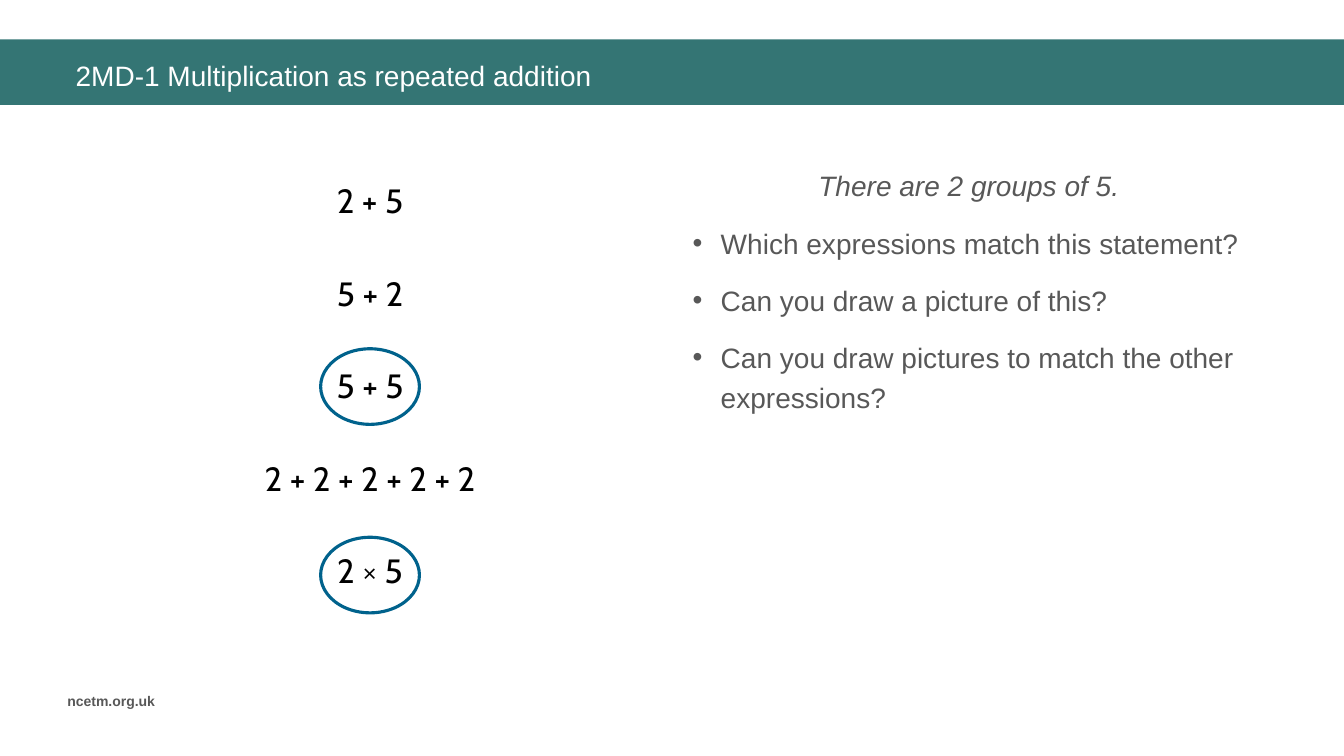
from pptx import Presentation
from pptx.dml.color import RGBColor
from pptx.enum.shapes import MSO_SHAPE
from pptx.enum.text import MSO_ANCHOR, PP_ALIGN
from pptx.oxml.ns import qn
from pptx.util import Inches, Pt
from lxml import etree

HUES = {"band": "347574", "text": "585858", "title": "FFFFFF",
        "sum": "000000", "ring": "00628C"}


def add_run(para, text, size, hue, face="Arial"):
    run = para.add_run()
    run.text = text
    run.font.size = Pt(size)
    run.font.name = face
    run.font.color.rgb = RGBColor.from_string(HUES[hue])
    return run


def add_box(left, top, width, height, wrap=True):
    box = slide.shapes.add_textbox(Inches(left), Inches(top), Inches(width), Inches(height))
    box.text_frame.word_wrap = wrap
    return box.text_frame


deck = Presentation()
deck.slide_width, deck.slide_height = Inches(13.33), Inches(7.5)
slide = deck.slides.add_slide(deck.slide_layouts[5])

# Band, placed behind the title
band = slide.shapes.add_shape(MSO_SHAPE.RECTANGLE, 0, Inches(0.39), deck.slide_width, Inches(0.65))
band.shadow.inherit = False
band.fill.solid()
band.fill.fore_color.rgb = RGBColor.from_string(HUES["band"])
band.line.fill.background()
slide.shapes.title._element.addprevious(band._element)

# Title
title = slide.shapes.title
title.left, title.top = Inches(0.65), Inches(0.51)
title.width, title.height = Inches(12.32), Inches(0.47)
title.text_frame.vertical_anchor = MSO_ANCHOR.MIDDLE
para = title.text_frame.paragraphs[0]
para.alignment = PP_ALIGN.LEFT
add_run(para, "2MD-1 Multiplication as repeated addition", 20, "title")

# Footer
foot = add_box(0.57, 6.82, 1.21, 0.27)
add_run(foot.paragraphs[0], "ncetm.org.uk", 10, "text").font.bold = True

# Column of sums: text, box width, top of the ring if any
MID, TOP, STEP = 3.67, 1.74, 0.917
sums = [("2 + 5", 0.89, None), ("5 + 2", 0.89, None), ("5 + 5", 0.89, 3.46),
        ("2 + 2 + 2 + 2 + 2", 2.44, None), ("2 × 5", 0.89, 5.33)]
for row, (text, width, ring_top) in enumerate(sums):
    frame = add_box(MID - width / 2, TOP + row * STEP, width, 0.5, wrap=False)
    para = frame.paragraphs[0]
    para.alignment = PP_ALIGN.CENTER
    add_run(para, text, 24, "sum", "Cabin")
    if ring_top:
        ring = slide.shapes.add_shape(MSO_SHAPE.OVAL, Inches(MID - 0.49), Inches(ring_top),
                                      Inches(0.98), Inches(0.75))
        ring.shadow.inherit = False
        ring.fill.background()
        ring.line.color.rgb = RGBColor.from_string(HUES["ring"])
        ring.line.width = Pt(2.25)

# Statement and questions
lines = ["There are 2 groups of 5.",
         "Which expressions match this statement?",
         "Can you draw a picture of this?",
         "Can you draw pictures to match the other expressions?"]
frame = add_box(6.77, 1.56, 5.68, 4.63)
for pos, text in enumerate(lines):
    para = frame.add_paragraph() if pos else frame.paragraphs[0]
    para.line_spacing = 1.2
    para.space_after = Pt(6)
    run = add_run(para, text, 20, "text")
    if pos == 0:
        para.alignment = PP_ALIGN.CENTER
        run.font.italic = True
    else:
        para.space_before = Pt(6)
        props = para._p.get_or_add_pPr()
        props.set("marL", str(Inches(0.28)))
        props.set("indent", str(-Inches(0.28)))
        etree.SubElement(props, qn("a:buFont")).set("typeface", "Arial")
        etree.SubElement(props, qn("a:buChar")).set("char", "•")

deck.save("out.pptx")
